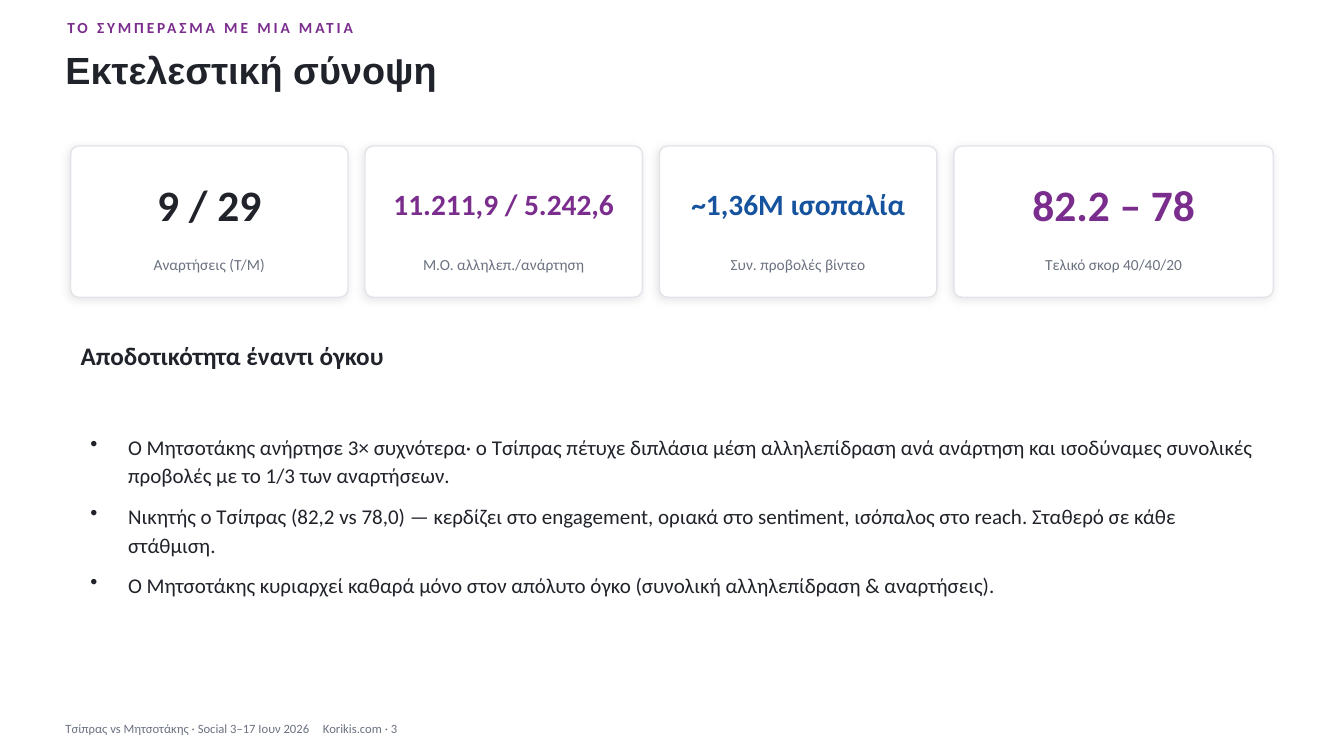
from lxml import etree
from pptx import Presentation
from pptx.dml.color import RGBColor
from pptx.enum.lang import MSO_LANGUAGE_ID
from pptx.enum.shapes import MSO_SHAPE
from pptx.enum.text import MSO_ANCHOR, PP_ALIGN
from pptx.oxml.ns import qn
from pptx.util import Cm, Pt

ROUNDED = MSO_SHAPE.ROUNDED_RECTANGLE
MIDDLE = MSO_ANCHOR.MIDDLE
LEFT, CENTER = PP_ALIGN.LEFT, PP_ALIGN.CENTER
GREEK = MSO_LANGUAGE_ID.GREEK

COLORS = {"ink": "20232A", "purple": "7B2D8E", "blue": "15539E",
          "muted": "6B7280", "border": "E2E4EA", "white": "FFFFFF",
          "shadow": "000000"}

CARD_GAP = 0.43
# value, value size, value colour, label, card width
CARDS = [
    ("9 / 29", 31, "ink", "Αναρτήσεις (Τ/Μ)", 6.99),
    ("11.211,9 / 5.242,6", 21, "purple", "Μ.Ο. αλληλεπ./ανάρτηση", 6.99),
    ("~1,36M ισοπαλία", 21, "blue", "Συν. προβολές βίντεο", 6.99),
    ("82.2 – 78", 31, "purple", "Τελικό σκορ 40/40/20", 8.05),
]
FINDINGS = [
    "Ο Μητσοτάκης ανήρτησε 3× συχνότερα· ο Τσίπρας πέτυχε διπλάσια μέση "
    "αλληλεπίδραση ανά ανάρτηση και ισοδύναμες συνολικές προβολές με το 1/3 "
    "των αναρτήσεων.",
    "Νικητής ο Τσίπρας (82,2 vs 78,0) — κερδίζει στο engagement, οριακά στο "
    "sentiment, ισόπαλος στο reach. Σταθερό σε κάθε στάθμιση.",
    "Ο Μητσοτάκης κυριαρχεί καθαρά μόνο στον απόλυτο όγκο (συνολική "
    "αλληλεπίδραση & αναρτήσεις).",
]


def rgb(name):
    return RGBColor.from_string(COLORS[name])


def style_run(r, size, color, bold=False, font="Calibri"):
    r.font.size = Pt(size)
    r.font.name = font
    r.font.bold = bold
    r.font.color.rgb = rgb(color)


def add_text(slide, box, text, size, color, bold=False, font="Calibri",
             align=LEFT):
    """Add a vertically centred text box; box is in centimetres."""
    tf = slide.shapes.add_textbox(*map(Cm, box)).text_frame
    tf.word_wrap = True
    tf.vertical_anchor = MIDDLE
    tf.text = text
    for p in tf.paragraphs:
        p.alignment = align
        for r in p.runs:
            style_run(r, size, color, bold, font)
    return tf


def add_soft_shadow(sp):
    sp.shadow.inherit = False
    effects = sp._element.spPr.find(qn("a:effectLst"))
    shadow = etree.SubElement(effects, qn("a:outerShdw"), blurRad=str(Pt(7)),
                              dist=str(Pt(2)), dir=str(135 * 60000),
                              algn="bl", rotWithShape="0")
    color = etree.SubElement(shadow, qn("a:srgbClr"), val=COLORS["shadow"])
    etree.SubElement(color, qn("a:alpha"), val="10000")


def add_header(slide, x, y, w):
    add_text(slide, (x, y + 0.56, w, 1.78), "Εκτελεστική σύνοψη", 27, "ink",
             bold=True, font="Arial")
    tf = add_text(slide, (x + 0.05, y, w - 0.51, 0.76),
                  "ΤΟ ΣΥΜΠΈΡΑΣΜΑ ΜΕ ΜΙΑ ΜΑΤΙΆ", 11, "purple", bold=True)
    r = tf.paragraphs[0].runs[0]
    r.font.language_id = GREEK
    rPr = r.font._element
    rPr.set("spc", "200")
    rPr.set("cap", "all")  # Greek capitals lose their accents


def add_card(slide, x, y, w, h, value, size, color, label):
    sp = slide.shapes.add_shape(ROUNDED, Cm(x), Cm(y), Cm(w), Cm(h))
    sp.adjustments[0] = 0.053
    sp.fill.solid()
    sp.fill.fore_color.rgb = rgb("white")
    sp.line.color.rgb = rgb("border")
    sp.line.width = Pt(1)
    add_soft_shadow(sp)
    add_text(slide, (x, y + 0.64, w, 1.65), value, size, color, bold=True,
             align=CENTER)
    add_text(slide, (x + 0.3, y + 2.41, w - 0.6, 1.14), label, 11, "muted",
             align=CENTER)


def add_card_row(slide, x, y, h):
    for value, size, color, label, w in CARDS:
        add_card(slide, x, y, w, h, value, size, color, label)
        x += w + CARD_GAP


def add_findings(slide, x, y, w):
    add_text(slide, (x, y, w, 1.14), "Αποδοτικότητα έναντι όγκου", 18, "ink",
             bold=True)
    tf = add_text(slide, (x + 0.25, y + 1.27, w - 0.51, 6.6),
                  "\n".join(FINDINGS), 15, "ink")
    for p in tf.paragraphs:
        pPr = p._p.get_or_add_pPr()
        pPr.set("marL", str(Cm(0.95)))
        pPr.set("indent", str(-Cm(0.95)))
        etree.SubElement(pPr, qn("a:buChar"), char="•")
        p.line_spacing = 1.15
        p.space_after = Pt(8)


def add_footer(slide, x, y, w):
    tf = add_text(slide, (x, y, w, 0.76),
                  "Τσίπρας vs Μητσοτάκης · Social 3–17 Ιουν 2026\t"
                  "Korikis.com · 3", 9, "muted")
    pPr = tf.paragraphs[0]._p.get_or_add_pPr()
    tabs = etree.SubElement(pPr, qn("a:tabLst"))
    etree.SubElement(tabs, qn("a:tab"), pos=str(Cm(6.49)), algn="l")


def main():
    prs = Presentation()
    prs.slide_width, prs.slide_height = Cm(33.87), Cm(19.05)
    slide = prs.slides.add_slide(prs.slide_layouts[6])
    add_header(slide, 1.4, 0.3, 30.99)
    add_card_row(slide, 1.78, 3.68, 3.81)
    add_findings(slide, 1.78, 8.38, 30.48)
    add_footer(slide, 1.4, 17.98, 30.99)
    prs.save("out.pptx")


if __name__ == "__main__":
    main()
